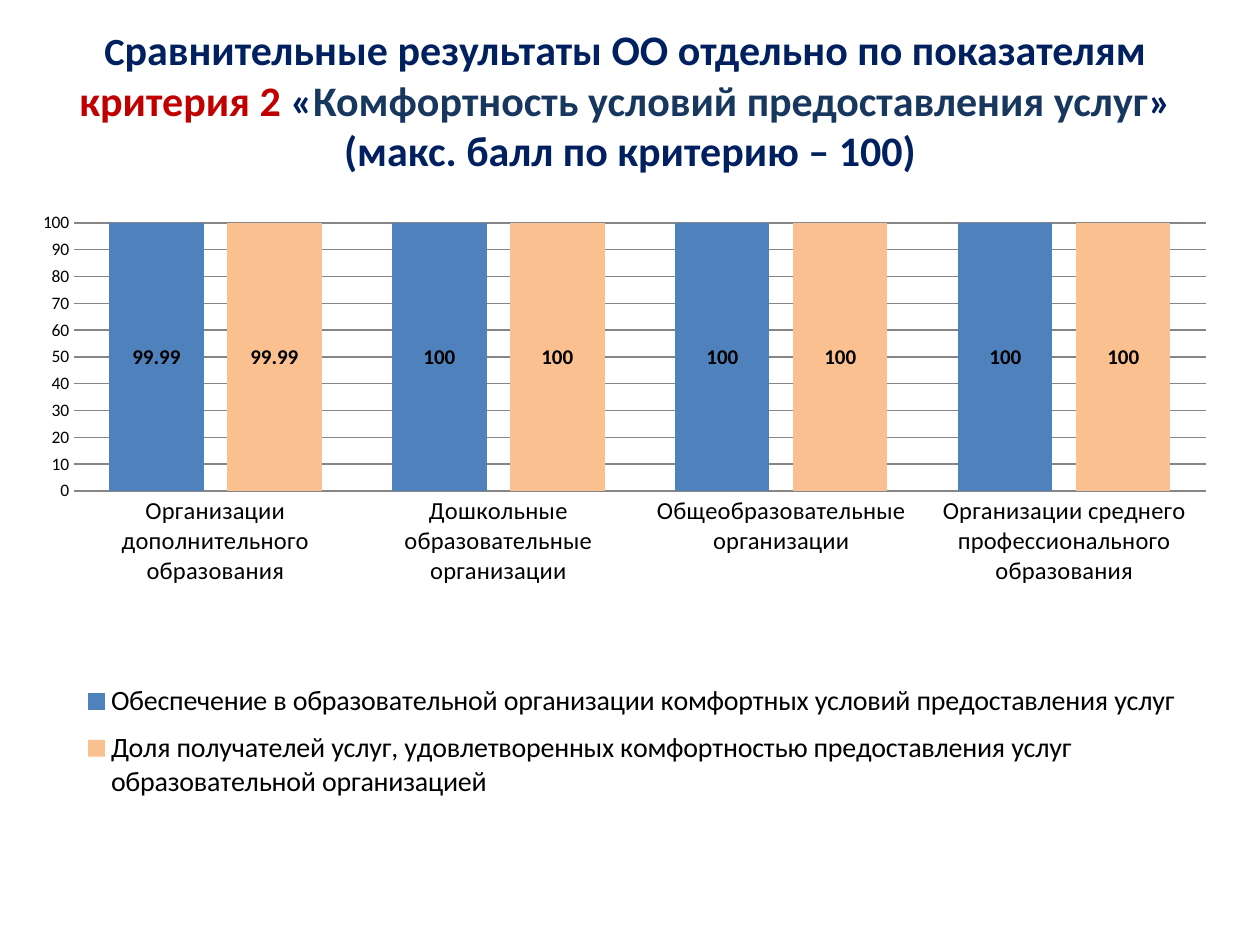
from lxml import etree
from pptx import Presentation
from pptx import util as u
from pptx.chart.data import CategoryChartData
from pptx.dml.color import RGBColor
from pptx.enum import chart as charts, text
from pptx.oxml.ns import qn

PX = 914400 / 126
THEME = {
    "font": "Calibri",
    "navy": "002060", "red": "C00000", "steel": "17375E",
    "black": "000000", "grid": "868686",
    "blue": "4F81BD", "peach": "FAC090",
    "initial": 22, "title": 24, "scale": 10, "value": 12, "category": 14, "legend": 16,
}
CHART_WIDTH, CHART_HEIGHT = 1200, 694


def style(font, size, color="black", bold=False):
    values = {"name": THEME["font"], "size": u.Pt(THEME[size]), "bold": bold}
    for name, value in values.items():
        setattr(font, name, value)
    font.color.rgb = RGBColor.from_string(THEME[color])


def set_layout(parent, index, inner, **frame):
    """Fix a chart part at a px frame measured inside the chart."""
    for old in parent.findall(qn("c:layout")):
        parent.remove(old)
    layout = etree.Element(qn("c:layout"))
    manual = etree.SubElement(layout, qn("c:manualLayout"))
    if inner:
        etree.SubElement(manual, qn("c:layoutTarget")).set("val", "inner")
    for side in "xy":
        etree.SubElement(manual, qn(f"c:{side}Mode")).set("val", "edge")
    for side, length in frame.items():
        whole = CHART_WIDTH if side in "xw" else CHART_HEIGHT
        etree.SubElement(manual, qn(f"c:{side}")).set("val", str(round(length / whole, 4)))
    parent.insert(index, layout)


deck = Presentation()
deck.slide_width, deck.slide_height = u.Inches(10), u.Inches(7.5)
page = deck.slides.add_slide(deck.slide_layouts[6])

# Title
box = page.shapes.add_textbox(*(int(n * PX) for n in (0, 0, 1260, 224)))
frame = box.text_frame
frame.word_wrap = True
frame.vertical_anchor = text.MSO_ANCHOR.BOTTOM
frame.margin_bottom = int(49 * PX)
para = frame.paragraphs[0]
para.alignment = text.PP_ALIGN.CENTER
title_lines = [
    [("С", "initial", "navy"),
     ("равнительные результаты ОО отдельно по показателям ", "title", "navy")],
    [("критерия 2", "title", "red"),
     (" «", "title", "navy"),
     ("Комфортность условий предоставления услуг", "title", "steel"),
     ("» ", "title", "navy")],
    [("(макс. балл по критерию – 100)", "title", "navy")],
]
for number, line in enumerate(title_lines):
    if number:
        para.add_line_break()
    for words, size, color in line:
        span = para.add_run()
        span.text = words
        style(span.font, size, color, bold=True)

# Comparison chart
scores = CategoryChartData()
scores.categories = [
    "Организации дополнительного образования",
    "Дошкольные образовательные организации",
    "Общеобразовательные организации",
    "Организации среднего профессионального образования",
]
for name in (
    "Обеспечение в образовательной организации комфортных условий предоставления услуг",
    "Доля получателей услуг, удовлетворенных комфортностью предоставления услуг "
    "образовательной организацией",
):
    scores.add_series(name, [99.99, 100, 100, 100])

chart = page.shapes.add_chart(
    charts.XL_CHART_TYPE.COLUMN_CLUSTERED,
    *(int(n * PX) for n in (25, 204, CHART_WIDTH, CHART_HEIGHT)), scores).chart
chart.has_title = False
style(chart.font, "scale")

plot = chart.plots[0]
for name, value in {"gap_width": 75, "overlap": -25, "vary_by_categories": False}.items():
    setattr(plot, name, value)
for series, color in zip(plot.series, ("blue", "peach")):
    series.format.fill.solid()
    series.format.fill.fore_color.rgb = RGBColor.from_string(THEME[color])
    labels = series.data_labels
    labels.show_value = True
    labels.position = charts.XL_LABEL_POSITION.CENTER
    style(labels.font, "value", bold=True)

for axis, size in ((chart.category_axis, "category"), (chart.value_axis, "scale")):
    axis.major_tick_mark = axis.minor_tick_mark = charts.XL_TICK_MARK.NONE
    style(axis.tick_labels.font, size)
scale = chart.value_axis
for name, value in {"minimum_scale": 0, "maximum_scale": 100, "major_unit": 10,
                    "has_major_gridlines": True}.items():
    setattr(scale, name, value)
scale.format.line.fill.background()
for rule in (scale.major_gridlines, chart.category_axis):
    rule.format.line.color.rgb = RGBColor.from_string(THEME["grid"])
    rule.format.line.width = u.Pt(0.75)

chart.has_legend = True
legend = chart.legend
legend.position = charts.XL_LEGEND_POSITION.BOTTOM
legend.include_in_layout = False
style(legend.font, "legend")

area = chart.element.find(".//" + qn("c:plotArea"))
set_layout(area, 0, True, x=49, y=19, w=1132, h=268)
set_layout(area.getparent().find(qn("c:legend")), 1, False, x=52, y=468, w=1110, h=140)

deck.save("out.pptx")
